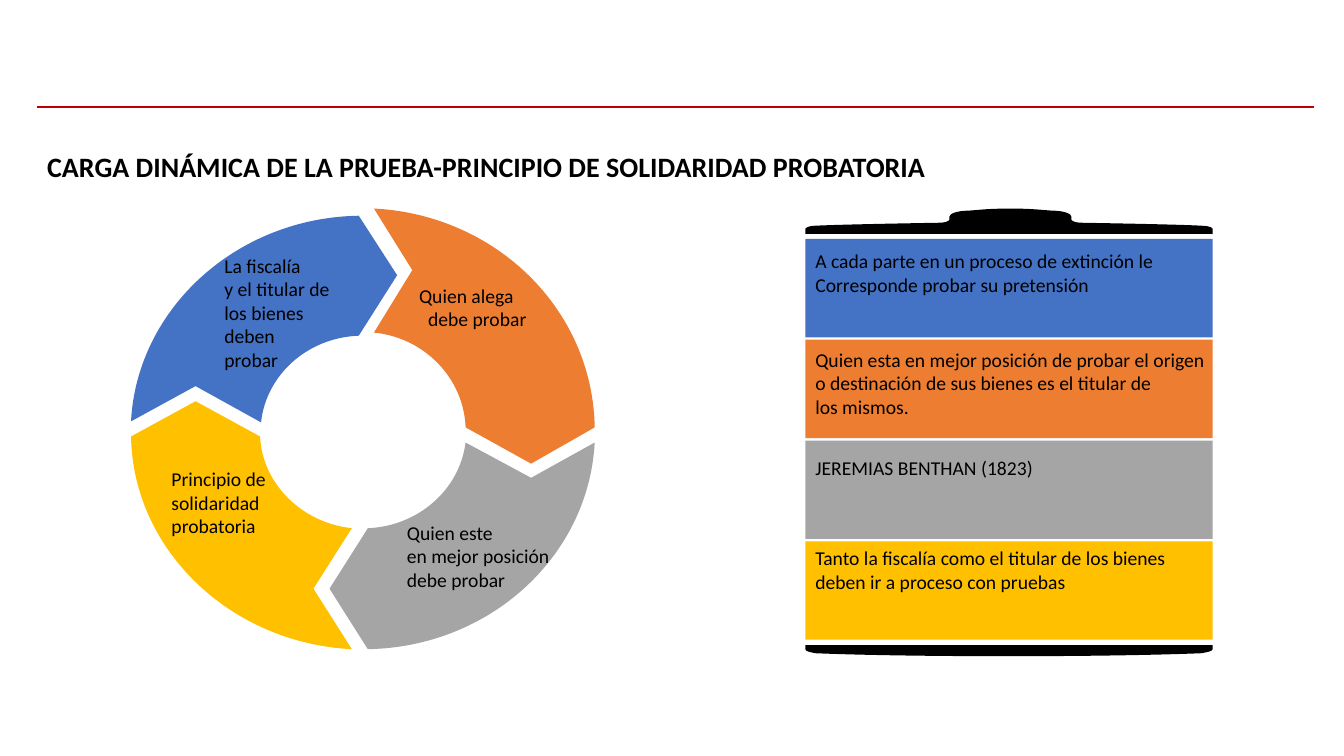
from lxml import etree
from pptx import Presentation
from pptx.dml.color import RGBColor
from pptx.enum.shapes import MSO_CONNECTOR, MSO_SHAPE
from pptx.enum.text import MSO_ANCHOR, PP_ALIGN
from pptx.oxml.ns import qn
from pptx.util import Pt

STRAIGHT = MSO_CONNECTOR.STRAIGHT
RECTANGLE = MSO_SHAPE.RECTANGLE
TOP = MSO_ANCHOR.TOP
LEFT, JUSTIFY = PP_ALIGN.LEFT, PP_ALIGN.JUSTIFY

COLORS = {
    "blue": "4472C4",
    "orange": "ED7D31",
    "gray": "A5A5A5",
    "yellow": "FFC000",
    "black": "000000",
    "rule": "C00000",
}


def write(shape, text, size=14, bold=False, align=LEFT, insets=(7.2, 3.6, 7.2, 3.6), indents=()):
    frame = shape.text_frame
    frame.word_wrap = True
    frame.vertical_anchor = TOP
    frame.margin_left, frame.margin_top, frame.margin_right, frame.margin_bottom = map(Pt, insets)
    for i, line in enumerate(text.split("\n")):
        paragraph = frame.paragraphs[0] if i == 0 else frame.add_paragraph()
        if i < len(indents):
            paragraph._p.get_or_add_pPr().set("marL", str(Pt(indents[i])))
        paragraph.alignment = align
        run = paragraph.add_run()
        run.text = line
        run.font.name = "Calibri"
        run.font.size = Pt(size)
        run.font.bold = bold
        run.font.color.rgb = RGBColor.from_string(COLORS["black"])


def paint(shape, color):
    shape.shadow.inherit = False
    shape.fill.solid()
    shape.fill.fore_color.rgb = RGBColor.from_string(COLORS[color])
    shape.line.fill.background()


prs = Presentation()
prs.slide_width, prs.slide_height = Pt(960), Pt(540)
slide = prs.slides.add_slide(prs.slide_layouts[6])
shapes = slide.shapes

# Header
rule = shapes.add_connector(STRAIGHT, Pt(26.6), Pt(76.3), Pt(938.9), Pt(76.3))
rule.line.color.rgb = RGBColor.from_string(COLORS["rule"])
rule.line.width = Pt(1.5)
etree.SubElement(rule._element.spPr, qn("a:effectLst"))

title = shapes.add_textbox(Pt(26.6), Pt(103), Pt(825), Pt(31.7))
write(title, "CARGA DINÁMICA DE LA PRUEBA-PRINCIPIO DE SOLIDARIDAD PROBATORIA",
      size=20, bold=True, align=JUSTIFY)

# Ring arrows and barrel ends: 2 numbers are a corner, 6 numbers a Bézier curve
outlines = [
    ("yellow", [
        (251.3, 463.7), (223.9, 420.5), (251.3, 377.3),
        (216, 373.7, 187.2, 345.6, 185.8, 311.8),
        (139.7, 286.6), (93.6, 311.8),
        (95, 393.1, 164.9, 459.4, 251.3, 463.7)]),
    ("gray", [
        (235.4, 420.5), (262.8, 463.7),
        (349.9, 462.2, 420.5, 397.4, 424.8, 316.1),
        (379.4, 341.3), (332.6, 316.1),
        (328.3, 349.9, 298.8, 375.8, 262.8, 377.3),
        (235.4, 420.5)]),
    ("orange", [
        (424.8, 305.3),
        (423.4, 221, 354.2, 153.4, 267.1, 149),
        (294.5, 193), (267.1, 237.6),
        (303.1, 241.2, 331.2, 270, 332.6, 305.3),
        (379.4, 331.2), (424.8, 305.3)]),
    ("blue", [
        (283.7, 196.6), (256.3, 154.1),
        (169.2, 155.5, 97.9, 220.3, 93.6, 301),
        (139.7, 275.8), (186.5, 301.7),
        (190.1, 267.8, 219.6, 241.2, 256.3, 239.8),
        (283.7, 196.6)]),
    ("black", [
        (866.2, 463.7),
        (866.2, 465.1, 862.6, 465.8, 858.2, 466.6),
        (841, 467.3, 794.9, 468.7, 720.7, 468.7),
        (643.7, 468.7, 599, 467.3, 582.5, 466.6),
        (578.2, 465.8, 575.3, 465.1, 575.3, 463.7),
        (575.3, 460.8), (866.2, 460.8), (866.2, 463.7)]),
    ("black", [
        (765.4, 157), (765.4, 154.8),
        (765.4, 152.6, 759.6, 150.5, 751.7, 150.5),
        (741.6, 149.8, 736.6, 149, 722.2, 149),
        (705.6, 149, 701.3, 149.8, 691.9, 150.5),
        (684, 150.5, 678.2, 152.6, 678.2, 154.8),
        (678.2, 157),
        (678.2, 157.7, 675.4, 159.1, 671.8, 159.1),
        (630.7, 159.8, 594, 160.6, 581.8, 161.3),
        (578.2, 161.3, 575.3, 162.7, 575.3, 163.4),
        (575.3, 167), (866.2, 167), (866.2, 163.4),
        (866.2, 162.7, 863.3, 161.3, 859, 161.3),
        (848.2, 160.6, 812.9, 159.8, 771.8, 159.1),
        (768.2, 159.1, 765.4, 157.7, 765.4, 157)]),
]
for color, steps in outlines:
    ends = [(Pt(step[-2]), Pt(step[-1])) for step in steps]
    builder = shapes.build_freeform(*ends[0])
    builder.add_line_segments(ends[1:], close=True)
    piece = builder.convert_to_shape()
    segments = list(piece._element.iter(qn("a:lnTo")))
    for step, segment in zip(steps[1:], segments):
        if len(step) == 6:
            curve = etree.Element(qn("a:cubicBezTo"))
            for x, y in zip(step[::2], step[1::2]):
                etree.SubElement(curve, qn("a:pt"), x=str(Pt(x) - piece.left), y=str(Pt(y) - piece.top))
            segment.getparent().replace(segment, curve)
    paint(piece, color)
    if color == "orange":
        write(piece, "Quien alega\ndebe probar", insets=(32.2, 53.6, 7.2, 3.6), indents=(0, 6.5))

# Ring labels
for left, top, width, height, label in [
    (153.2, 177.5, 98.6, 92.2, "La fiscalía\ny el titular de los bienes\ndeben\nprobar"),
    (283.5, 368.2, 480, 58.3, "Quien este\nen mejor posición\ndebe probar"),
    (115.4, 330.2, 480, 58.3, "Principio de\nsolidaridad\nprobatoria"),
]:
    write(shapes.add_textbox(Pt(left), Pt(top), Pt(width), Pt(height)), label)

# Barrel bands
BAND_LEFT, BAND_TOP, BAND_WIDTH, BAND_HEIGHT, BAND_PITCH = 575.3, 170.7, 290.9, 70.3, 72
bands = [
    ("blue", 7.1, "A cada parte en un proceso de extinción le\nCorresponde probar su pretensión"),
    ("orange", 5.6, "Quien esta en mejor posición de probar el origen\n"
                    "o destinación de sus bienes es el titular de\nlos mismos."),
    ("gray", 10.8, "JEREMIAS BENTHAN (1823)"),
    ("yellow", 3.6, "Tanto la fiscalía como el titular de los bienes deben ir a proceso con pruebas"),
]
for i, (color, inset_top, statement) in enumerate(bands):
    band = shapes.add_shape(RECTANGLE, Pt(BAND_LEFT), Pt(BAND_TOP + i * BAND_PITCH),
                            Pt(BAND_WIDTH), Pt(BAND_HEIGHT))
    paint(band, color)
    write(band, statement, insets=(7.2, inset_top, 3.6, 3.6))

prs.save("out.pptx")
